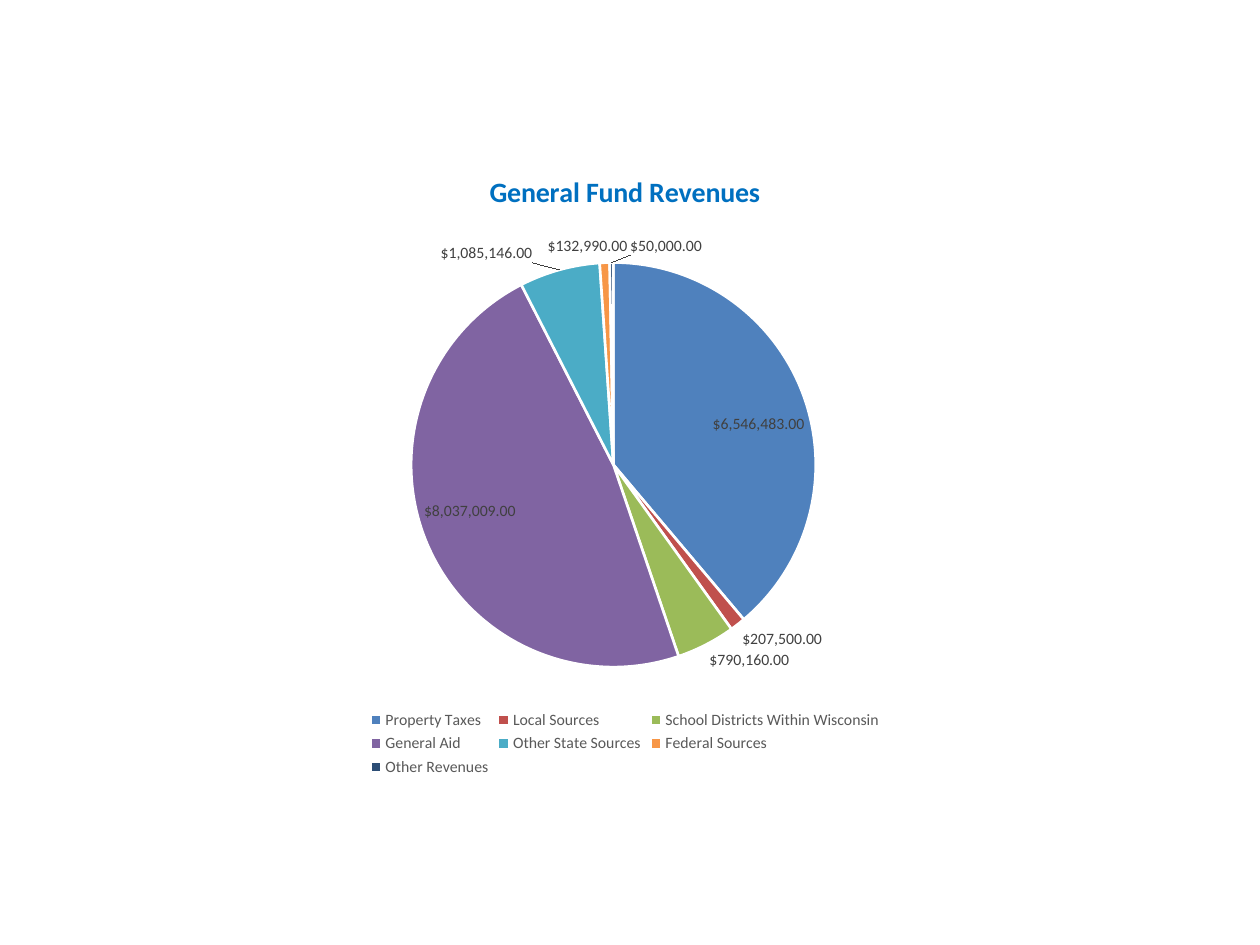
from lxml import etree
from pptx import Presentation
from pptx.chart.data import CategoryChartData
from pptx.dml.color import RGBColor
from pptx.enum.chart import XL_CHART_TYPE, XL_LABEL_POSITION as LabelPos, XL_LEGEND_POSITION as LegendPos
from pptx.oxml.ns import qn
from pptx.util import Inches, Pt

TITLE = "General Fund Revenues"
REVENUES = [  # source, dollars, slice colour
    ("Property Taxes", 6546483, "4F81BD"),
    ("Local Sources", 207500, "C0504D"),
    ("School Districts Within Wisconsin", 790160, "9BBB59"),
    ("General Aid", 8037009, "8064A2"),
    ("Other State Sources", 1085146, "4BACC6"),
    ("Federal Sources", 132990, "F79646"),
    ("Other Revenues", 50000, "2C4D75"),
]
DOLLARS = '"$"#,##0.00'
CHART_BOX = (1.93, 1.18, 6.06, 5.02)
PIE_SHARES = {"x": 0.22, "y": 0.18, "w": 0.53, "h": 0.64}


def style(font, size, color, bold=False):
    font.name = "Calibri"
    font.size = Pt(size)
    font.bold = bold
    font.color.rgb = RGBColor.from_string(color)


def place_pie(chart, shares):
    """Fix the pie's box as shares of the chart's size."""
    plot_area = chart.plots[0]._element.getparent()
    for old in plot_area.findall(qn("c:layout")):
        plot_area.remove(old)
    layout = etree.Element(qn("c:layout"))
    plot_area.insert(0, layout)
    manual = etree.SubElement(layout, qn("c:manualLayout"))
    settings = {"layoutTarget": "inner", "xMode": "edge", "yMode": "edge", **shares}
    for tag, value in settings.items():
        etree.SubElement(manual, qn(f"c:{tag}"), val=str(value))


prs = Presentation()
prs.slide_width, prs.slide_height = Inches(10), Inches(7.5)
slide = prs.slides.add_slide(prs.slide_layouts[6])

revenue_data = CategoryChartData(number_format=DOLLARS)
revenue_data.categories = [source for source, _, _ in REVENUES]
revenue_data.add_series("Series 1", [dollars for _, dollars, _ in REVENUES])
chart = slide.shapes.add_chart(
    XL_CHART_TYPE.PIE, *map(Inches, CHART_BOX), revenue_data).chart
style(chart.font, 10, "000000")

chart.has_title = True
title_run = chart.chart_title.text_frame.paragraphs[0].add_run()
title_run.text = TITLE
style(title_run.font, 16, "0070C0", bold=True)
chart.chart_title.include_in_layout = False

chart.has_legend = True
chart.legend.position = LegendPos.BOTTOM
chart.legend.include_in_layout = False
style(chart.legend.font, 9, "595959")

pie = chart.plots[0]
pie.vary_by_categories = True
slices = pie.series[0]
for index, (_, _, color) in enumerate(REVENUES):
    look = slices.points[index].format
    look.fill.solid()
    look.fill.fore_color.rgb = RGBColor.from_string(color)
    look.line.color.rgb = RGBColor.from_string("FFFFFF")
    look.line.width = Pt(1.5)

amounts = slices.data_labels
amounts.show_value = True
amounts.number_format = DOLLARS
amounts.number_format_is_linked = False
amounts.position = LabelPos.BEST_FIT
style(amounts.font, 9, "404040")
place_pie(chart, PIE_SHARES)

prs.save("out.pptx")
